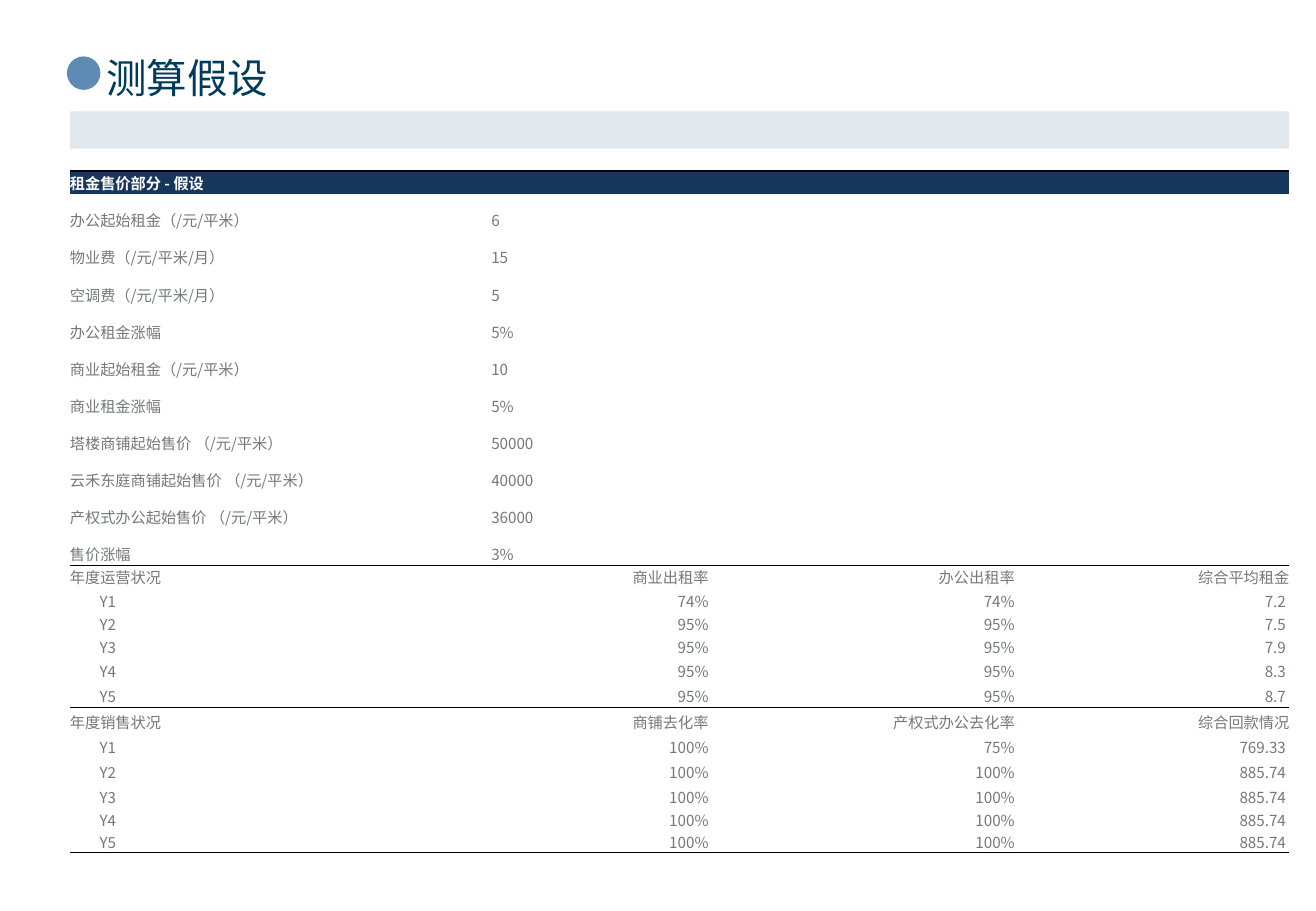
from dataclasses import dataclass

from pptx import Presentation
from pptx.dml.color import RGBColor
from pptx.enum.shapes import MSO_SHAPE
from pptx.enum.text import MSO_ANCHOR, PP_ALIGN
from pptx.oxml import parse_xml
from pptx.oxml.ns import nsdecls, qn
from pptx.table import Table, _Cell
from pptx.util import Cm, Pt

OVAL, RECTANGLE = MSO_SHAPE.OVAL, MSO_SHAPE.RECTANGLE
BOTTOM, MIDDLE = MSO_ANCHOR.BOTTOM, MSO_ANCHOR.MIDDLE
LEFT, RIGHT = PP_ALIGN.LEFT, PP_ALIGN.RIGHT

WHITE = RGBColor(0xFF, 0xFF, 0xFF)
BLACK = RGBColor(0x00, 0x00, 0x00)
GREY = RGBColor(0x75, 0x78, 0x7B)
NAVY = RGBColor(0x16, 0x36, 0x5C)
TITLE_BLUE = RGBColor(0x00, 0x3C, 0x59)
DOT_BLUE = RGBColor(0x5E, 0x8A, 0xB4)
BAND_GREY = RGBColor(0xE1, 0xE9, 0xEC)

TITLE_FONT = "Calibri"
TABLE_FONT = "Noto Sans CJK SC"
NO_STYLE = "{2D5ABB26-0587-4C30-8999-92F81FD0307C}"

CONTENT_LEFT, CONTENT_WIDTH = 1.46, 25.49
COLUMN_WIDTHS = (8.81, 4.54, 6.4, 5.74)
HEADING_HEIGHT, ASSUMPTION_HEIGHT = 0.48, 0.75
YEAR_INDENT = 0.62


@dataclass(frozen=True)
class Ornament:
    kind: MSO_SHAPE
    left: float
    top: float
    width: float
    height: float
    color: RGBColor


@dataclass(frozen=True)
class YearBlock:
    headings: tuple[str, ...]
    years: tuple[tuple[str, ...], ...]
    heights: tuple[float, ...]


ORNAMENTS = (
    Ornament(OVAL, 1.4, 1.18, 0.7, 0.7, DOT_BLUE),
    Ornament(RECTANGLE, CONTENT_LEFT, 2.33, CONTENT_WIDTH, 0.78, BAND_GREY),
)

ASSUMPTIONS = (
    ("办公起始租金（/元/平米）", "6"),
    ("物业费（/元/平米/月）", "15"),
    ("空调费（/元/平米/月）", "5"),
    ("办公租金涨幅", "5%"),
    ("商业起始租金（/元/平米）", "10"),
    ("商业租金涨幅", "5%"),
    ("塔楼商铺起始售价 （/元/平米）", "50000"),
    ("云禾东庭商铺起始售价 （/元/平米）", "40000"),
    ("产权式办公起始售价 （/元/平米）", "36000"),
    ("售价涨幅", "3%"),
)

YEAR_BLOCKS = (
    YearBlock(
        ("年度运营状况", "商业出租率", "办公出租率", "综合平均租金"),
        (
            ("Y1", "74%", "74%", "7.2 "),
            ("Y2", "95%", "95%", "7.5 "),
            ("Y3", "95%", "95%", "7.9 "),
            ("Y4", "95%", "95%", "8.3 "),
            ("Y5", "95%", "95%", "8.7 "),
        ),
        (0.47, 0.5, 0.48, 0.48, 0.52, 0.52),
    ),
    YearBlock(
        ("年度销售状况", "商铺去化率", "产权式办公去化率", "综合回款情况"),
        (
            ("Y1", "100%", "75%", "769.33 "),
            ("Y2", "100%", "100%", "885.74 "),
            ("Y3", "100%", "100%", "885.74 "),
            ("Y4", "100%", "100%", "885.74 "),
            ("Y5", "100%", "100%", "885.74 "),
        ),
        (0.54, 0.52, 0.52, 0.52, 0.48, 0.46),
    ),
)


def add_ornament(slide, ornament: Ornament) -> None:
    shape = slide.shapes.add_shape(
        ornament.kind, Cm(ornament.left), Cm(ornament.top),
        Cm(ornament.width), Cm(ornament.height))
    shape.shadow.inherit = False
    shape.fill.solid()
    shape.fill.fore_color.rgb = ornament.color
    shape.line.fill.background()


def write_cell(cell: _Cell, text: str, align: PP_ALIGN = LEFT,
               indent: float = 0, color: RGBColor = GREY, bold: bool = False) -> None:
    cell.text = text
    paragraph = cell.text_frame.paragraphs[0]
    paragraph.alignment = align
    paragraph.font.name = TABLE_FONT
    paragraph.font.size = Pt(9)
    paragraph.font.bold = bold
    paragraph.font.color.rgb = color
    cell.margin_left = Cm(indent)


def rule_row(table: Table, row: int, side: str, points: float) -> None:
    for cell in table.rows[row].cells:
        cell._tc.get_or_add_tcPr().insert(0, parse_xml(
            f'<a:{side} {nsdecls("a")} w="{Pt(points)}"><a:solidFill>'
            f'<a:srgbClr val="{BLACK}"/></a:solidFill></a:{side}>'))


def build_table(slide) -> None:
    heights = [HEADING_HEIGHT] + [ASSUMPTION_HEIGHT] * len(ASSUMPTIONS)
    for block in YEAR_BLOCKS:
        heights.extend(block.heights)
    table = slide.shapes.add_table(
        len(heights), len(COLUMN_WIDTHS), Cm(CONTENT_LEFT), Cm(3.58),
        Cm(CONTENT_WIDTH), Cm(sum(heights))).table
    table.first_row = table.horz_banding = False
    table._tbl.tblPr.find(qn("a:tableStyleId")).text = NO_STYLE
    for column, width in zip(table.columns, COLUMN_WIDTHS):
        column.width = Cm(width)
    for row, height in zip(table.rows, heights):
        row.height = Cm(height)
    for cell in table.iter_cells():
        cell.margin_left = cell.margin_right = cell.margin_top = cell.margin_bottom = 0
        cell.vertical_anchor = BOTTOM
        cell.fill.background()

    # Heading row
    for column, text in enumerate(("租金售价部分 - 假设", "", "", "")):
        cell = table.cell(0, column)
        write_cell(cell, text, color=WHITE, bold=True)
        cell.fill.solid()
        cell.fill.fore_color.rgb = NAVY
    table.cell(0, 2).merge(table.cell(0, 3))
    rule_row(table, 0, "lnT", 1)

    # Rent and price assumptions
    for row, (label, value) in enumerate(ASSUMPTIONS, start=1):
        write_cell(table.cell(row, 0), label)
        write_cell(table.cell(row, 1), value)
        table.cell(row, 1).merge(table.cell(row, 2))
    rule_row(table, len(ASSUMPTIONS), "lnB", 0.5)

    # Yearly operation and sales
    row = len(ASSUMPTIONS) + 1
    for block in YEAR_BLOCKS:
        for offset, texts in enumerate((block.headings, *block.years)):
            indent = YEAR_INDENT if offset else 0
            write_cell(table.cell(row + offset, 0), texts[0], indent=indent)
            for column, text in enumerate(texts[1:], start=1):
                write_cell(table.cell(row + offset, column), text, RIGHT)
        row += len(block.heights)
        rule_row(table, row - 1, "lnB", 0.5)


def main() -> None:
    presentation = Presentation()
    presentation.slide_width, presentation.slide_height = Cm(27.51), Cm(19.05)
    slide = presentation.slides.add_slide(presentation.slide_layouts[5])

    # Title
    title = slide.shapes.title
    title.left, title.top, title.width, title.height = Cm(2.22), Cm(0.95), Cm(23.85), Cm(1.35)
    frame = title.text_frame
    frame.text = "测算假设"
    frame.margin_left = frame.margin_right = 0
    frame.vertical_anchor = MIDDLE
    heading = frame.paragraphs[0]
    heading.alignment = LEFT
    heading.font.name = TITLE_FONT
    heading.font.size = Pt(24)
    heading.font.color.rgb = TITLE_BLUE

    # Dot and band
    for ornament in ORNAMENTS:
        add_ornament(slide, ornament)

    build_table(slide)
    presentation.save("out.pptx")


if __name__ == "__main__":
    main()
